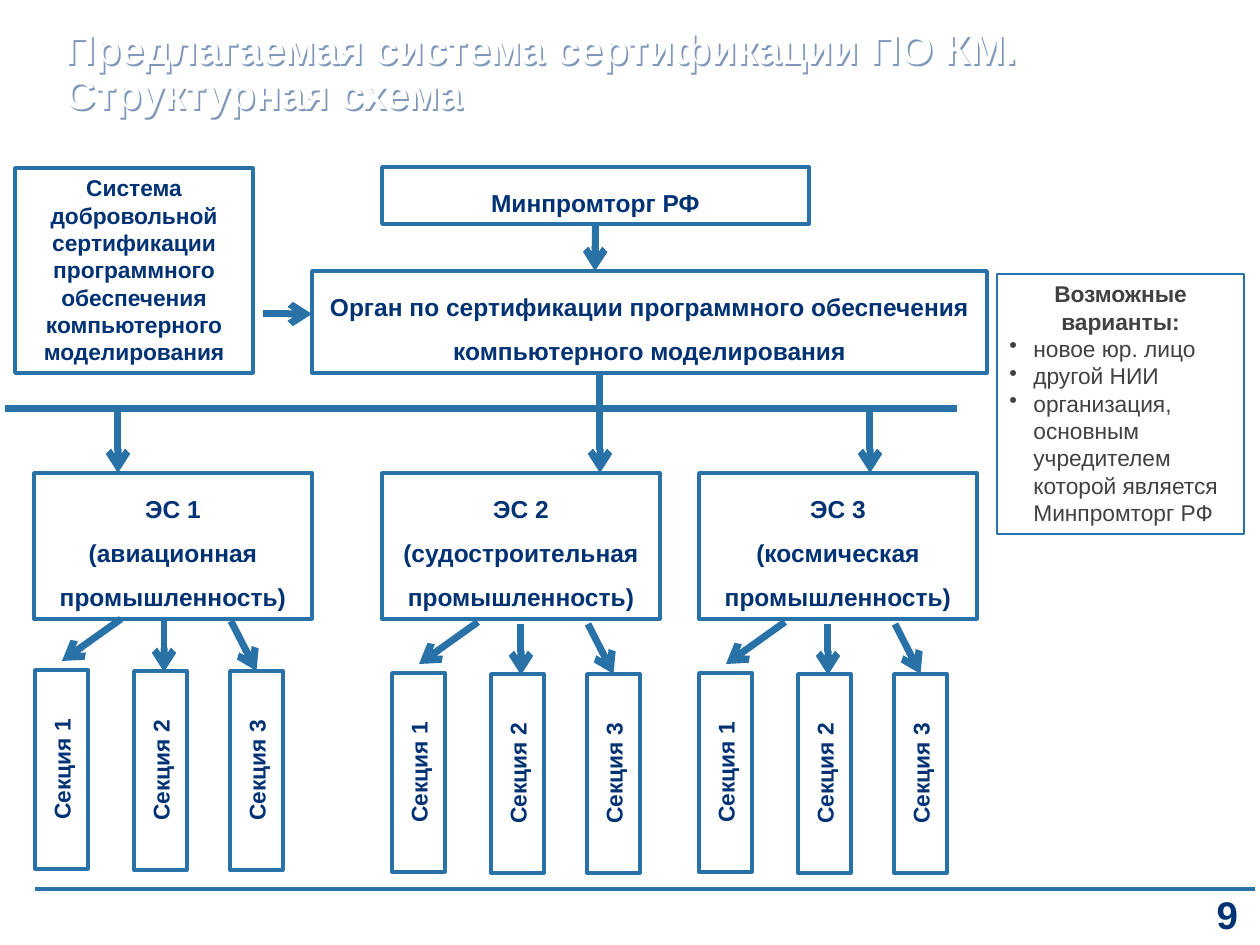
from lxml.etree import SubElement
from pptx import Presentation
from pptx.dml.color import RGBColor
from pptx.enum.shapes import MSO_CONNECTOR as CONNECTOR, MSO_SHAPE as SHAPE
from pptx.enum.text import MSO_ANCHOR as ANCHOR, PP_ALIGN as ALIGN
from pptx.oxml.ns import qn
from pptx.util import Emu, Pt

PX = 914400 / 126
NAVY, BLUE, GRAY, WHITE = (RGBColor.from_string(c) for c in ("003274", "2972A7", "414142", "FFFFFF"))
LEFT, CENTER, RIGHT = ALIGN.LEFT, ALIGN.CENTER, ALIGN.RIGHT
THEME = {
    "font": "Arial",
    "line": BLUE,
    "arrow": 4,
    "rule": 2.25,
    "border": 2,
    "thin": 1,
    "text": {
        "title": (24, True, WHITE, LEFT, 0.9),
        "number": (22, True, NAVY, RIGHT, 1.0),
        "unit": (14, True, NAVY, CENTER, 1.5),
        "section": (13, True, NAVY, CENTER, 1.0),
        "heading": (13, True, GRAY, CENTER, 1.0),
        "bullet": (13, False, GRAY, LEFT, 1.0),
    },
}


def write(shape, lines, **frame_format):
    frame = shape.text_frame
    for name, value in {"word_wrap": True, "vertical_anchor": ANCHOR.TOP, **frame_format}.items():
        setattr(frame, name, value)
    for index, (style, text) in enumerate(lines):
        size, bold, color, align, spacing = THEME["text"][style]
        paragraph = frame.paragraphs[0] if index == 0 else frame.add_paragraph()
        paragraph.alignment = align
        paragraph.line_spacing = spacing
        if style == "bullet":
            properties = paragraph._p.get_or_add_pPr()
            properties.set("marL", str(round(24 * PX)))
            properties.set("indent", str(round(-24 * PX)))
            SubElement(properties, qn("a:buChar"), char="•")
        run = paragraph.add_run()
        run.text = text
        for name, value in {"name": THEME["font"], "size": Pt(size), "bold": bold}.items():
            setattr(run.font, name, value)
        run.font.color.rgb = color


def link(start, end, width=THEME["arrow"], tip=True):
    connector = slide.shapes.add_connector(
        CONNECTOR.STRAIGHT, *(Emu(round(v * PX)) for v in (*start, *end)))
    connector.line.color.rgb = THEME["line"]
    connector.line.width = Pt(width)
    if tip:
        SubElement(connector.line._get_or_add_ln(), qn("a:tailEnd"), type="arrow")
    SubElement(connector._element.spPr, qn("a:effectLst"))
    return connector


deck = Presentation()
deck.slide_width, deck.slide_height = Emu(round(1260 * PX)), Emu(round(945 * PX))
slide = deck.slides.add_slide(deck.slide_layouts[6])

labels = [
    ((65, 11, 1131, 125), "title", "Предлагаемая система сертификации ПО КМ. Структурная схема"),
    ((1183, 888, 55, 52), "number", "9"),
]
margins = dict.fromkeys(("margin_left", "margin_top", "margin_right", "margin_bottom"), 0)
for area, style, text in labels:
    label = slide.shapes.add_textbox(*(Emu(round(v * PX)) for v in area))
    write(label, [(style, text)], vertical_anchor=ANCHOR.MIDDLE, **margins)
    if style == "title":
        effects = SubElement(label._element.spPr, qn("a:effectLst"))
        shadow = SubElement(effects, qn("a:outerShdw"), dist="17961", dir="2700000")
        tint = SubElement(shadow, qn("a:srgbClr"), val=str(NAVY))
        SubElement(tint, qn("a:alpha"), val="50000")

industries = [
    (34, 0, 118, ["ЭС 1", "(авиационная промышленность)"], 35),
    (382, 3, 600, ["ЭС 2", "(судостроительная", "промышленность)"], 392),
    (699, 3, 870, ["ЭС 3", "(космическая", "промышленность)"], 699),
]
section_places = [(0, 670), (99, 671), (195, 671)]

boxes = [
    ("ministry", (382, 167, 427, 57), [("unit", "Минпромторг РФ")]),
    ("body", (312, 271, 675, 102), [
        ("unit", "Орган по сертификации программного обеспечения компьютерного моделирования")]),
    ("system", (15, 168, 238, 205), [
        ("section", "Система добровольной сертификации программного обеспечения компьютерного моделирования")]),
    ("options", (997, 274, 247, 260), [
        ("heading", "Возможные варианты:"),
        ("bullet", "новое юр. лицо"),
        ("bullet", "другой НИИ"),
        ("bullet", "организация, основным учредителем которой является Минпромторг РФ")]),
]
for left, drop, entry, names, sections_left in industries:
    boxes.append((names[0], (left, 473, 278, 146), [("unit", name) for name in names]))
    for number, (offset, top) in enumerate(section_places, 1):
        boxes.append(((names[0], number), (sections_left + offset, top + drop, 53, 199),
                      [("section", f"Секция {number}")]))

drawn = {}
for key, area, lines in boxes:
    box = slide.shapes.add_shape(SHAPE.RECTANGLE, *(Emu(round(v * PX)) for v in area))
    box.shadow.inherit = False
    box.fill.background()
    box.line.color.rgb = THEME["line"]
    box.line.width = Pt(THEME["thin"] if key == "options" else THEME["border"])
    upright = isinstance(key, tuple)
    write(box, lines, vertical_anchor=ANCHOR.MIDDLE if upright else ANCHOR.TOP)
    if upright:
        box.text_frame._txBody.bodyPr.set("vert", "vert270")
    drawn[key] = box

link((35, 889), (1255, 889), THEME["rule"], tip=False)
link((5, 409), (957, 409), tip=False)
link((600, 373), (600, 409), tip=False)
link((263, 314), (312, 314))
link((595, 224), (595, 271)).begin_connect(drawn["ministry"], 2)

for left, drop, entry, names, sections_left in industries:
    link((entry, 409), (entry, 473))
    for start_x, start_y, end_x, end_y in [(86, 619, 27, 661), (129, 621, 129, 672), (196, 621, 221, 671)]:
        branch = link((sections_left + start_x, start_y + drop), (sections_left + end_x, end_y + drop))
    branch.end_connect(drawn[names[0], 3], 0)

deck.save("out.pptx")
